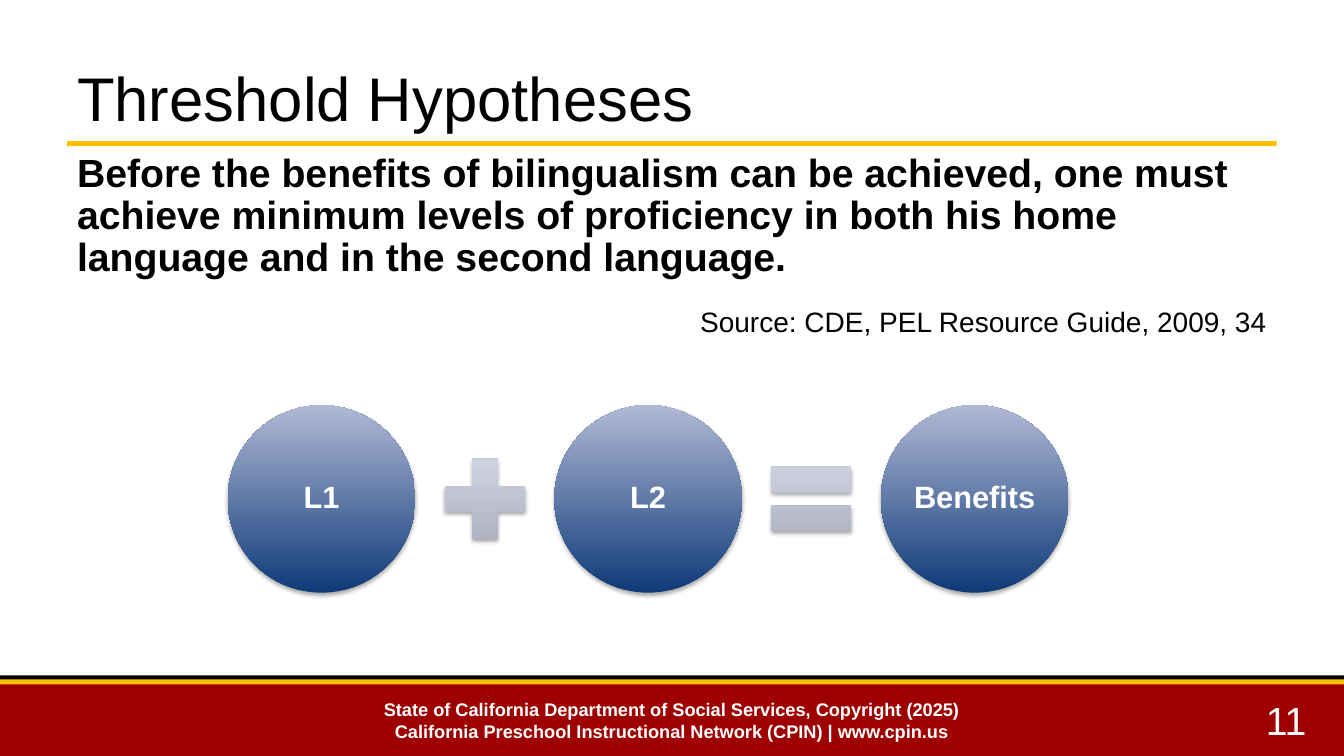
from lxml import etree
from pptx import Presentation, util as u
from pptx.dml.color import RGBColor
from pptx.enum import shapes, text
from pptx.oxml.ns import qn

COLORS = {"black": "000000", "white": "FFFFFF", "gold": "FFC000", "red": "9E0000",
          "disc dark": "0F3A78", "disc light": "B0B9D5",
          "sign dark": "AAAEBC", "sign light": "D4D8E7"}
PRESET, ALIGN, ANCHOR = shapes.MSO_SHAPE, text.PP_ALIGN, text.MSO_ANCHOR

deck = Presentation()
deck.slide_width, deck.slide_height = u.Inches(13.33), u.Inches(7.5)
slide = deck.slides.add_slide(deck.slide_layouts[6])

# Grid: 20 columns by 100 rows
COL, ROW = deck.slide_width / 20, deck.slide_height / 100


def write(frame, wording, size, color, bold=False, align=ALIGN.LEFT,
          anchor=ANCHOR.TOP, spacing=1.0):
    frame.text = wording
    frame.word_wrap = True
    frame.vertical_anchor = anchor
    for paragraph in frame.paragraphs:
        paragraph.alignment = align
        paragraph.line_spacing = spacing
        for run in paragraph.runs:
            run.font.name, run.font.size, run.font.bold = "Arial", u.Pt(size), bold
            run.font.color.rgb = RGBColor.from_string(COLORS[color])


def text_area(col, row, cols, rows):
    return slide.shapes.add_textbox(int(col * COL), int(row * ROW),
                                    int(cols * COL), int(rows * ROW)).text_frame


# Title rule and footer bands
for col, row, cols, rows, color in [(1, 18.67, 18, 0.67, "gold"),
                                    (0, 89.33, 20, 9.07, "black"),
                                    (0, 90.4, 20, 9.6, "red"),
                                    (0, 89.87, 20, 0.67, "gold")]:
    band = slide.shapes.add_shape(PRESET.RECTANGLE, int(col * COL), int(row * ROW),
                                  int(cols * COL), int(rows * ROW))
    band.fill.solid()
    band.fill.fore_color.rgb = RGBColor.from_string(COLORS[color])
    band.line.fill.background()
    band.shadow.inherit = False

# Footer text and page number
write(text_area(18.28, 90.4, 1.72, 9.73), "11", 28, "white",
      align=ALIGN.CENTER, anchor=ANCHOR.MIDDLE)
write(text_area(2.35, 90.4, 15.28, 9.73),
      "State of California Department of Social Services, Copyright (2025)\n"
      "California Preschool Instructional Network (CPIN) | www.cpin.us",
      13, "white", bold=True, align=ALIGN.CENTER, anchor=ANCHOR.MIDDLE)

# Title
write(text_area(1, 4, 18, 14.4), "Threshold Hypotheses", 44, "black",
      anchor=ANCHOR.BOTTOM, spacing=0.85)

# Statement and its source
body = text_area(1, 19.6, 18, 26.8)
write(body, "Before the benefits of bilingualism can be achieved, one must achieve "
      "minimum levels of proficiency in both his home language and in the second "
      "language.\nSource: CDE, PEL Resource Guide, 2009, 34",
      28, "black", bold=True, spacing=0.9)
statement, source = body.paragraphs
statement.space_after = source.space_after = u.Pt(5)
source.space_before = u.Pt(15)
source.alignment = ALIGN.RIGHT
source.runs[0].font.size, source.runs[0].font.bold = u.Pt(20), False

# Equation: L1 + L2 = Benefits, with evenly spaced centres
DISC, SIGN = 24.8 * ROW, 14.4 * ROW
FIRST, PITCH, MIDDLE = 4.785 * COL, 2.43 * COL, 66 * ROW
terms = [(PRESET.OVAL, "L1"), (PRESET.MATH_PLUS, ""), (PRESET.OVAL, "L2"),
         (PRESET.MATH_EQUAL, ""), (PRESET.OVAL, "Benefits")]
for step, (preset, label) in enumerate(terms):
    size, tone = (DISC, "disc") if label else (SIGN, "sign")
    term = slide.shapes.add_shape(preset, int(FIRST + step * PITCH - size / 2),
                                  int(MIDDLE - size / 2), int(size), int(size))
    term.fill.gradient()
    term.fill.gradient_angle = 90
    for stop, shade in zip(term.fill.gradient_stops, ("dark", "light")):
        stop.color.rgb = RGBColor.from_string(COLORS[f"{tone} {shade}"])
    term.line.fill.background()

    # Soft shadow straight below
    term.shadow.inherit = False
    effects = term._element.spPr.find(qn("a:effectLst"))
    shadow = etree.SubElement(effects, qn("a:outerShdw"), blurRad=str(u.Pt(3.1)),
                              dist=str(u.Pt(1.8)), dir="5400000", rotWithShape="0")
    ink = etree.SubElement(shadow, qn("a:srgbClr"), val=COLORS["black"])
    etree.SubElement(ink, qn("a:alpha"), val="35000")

    if label:
        frame = term.text_frame
        frame.margin_left = frame.margin_right = u.Inches(0.03)
        frame.margin_top = frame.margin_bottom = u.Inches(0.03)
        write(frame, label, 22, "white", bold=True, align=ALIGN.CENTER,
              anchor=ANCHOR.MIDDLE, spacing=0.9)

deck.save("out.pptx")
